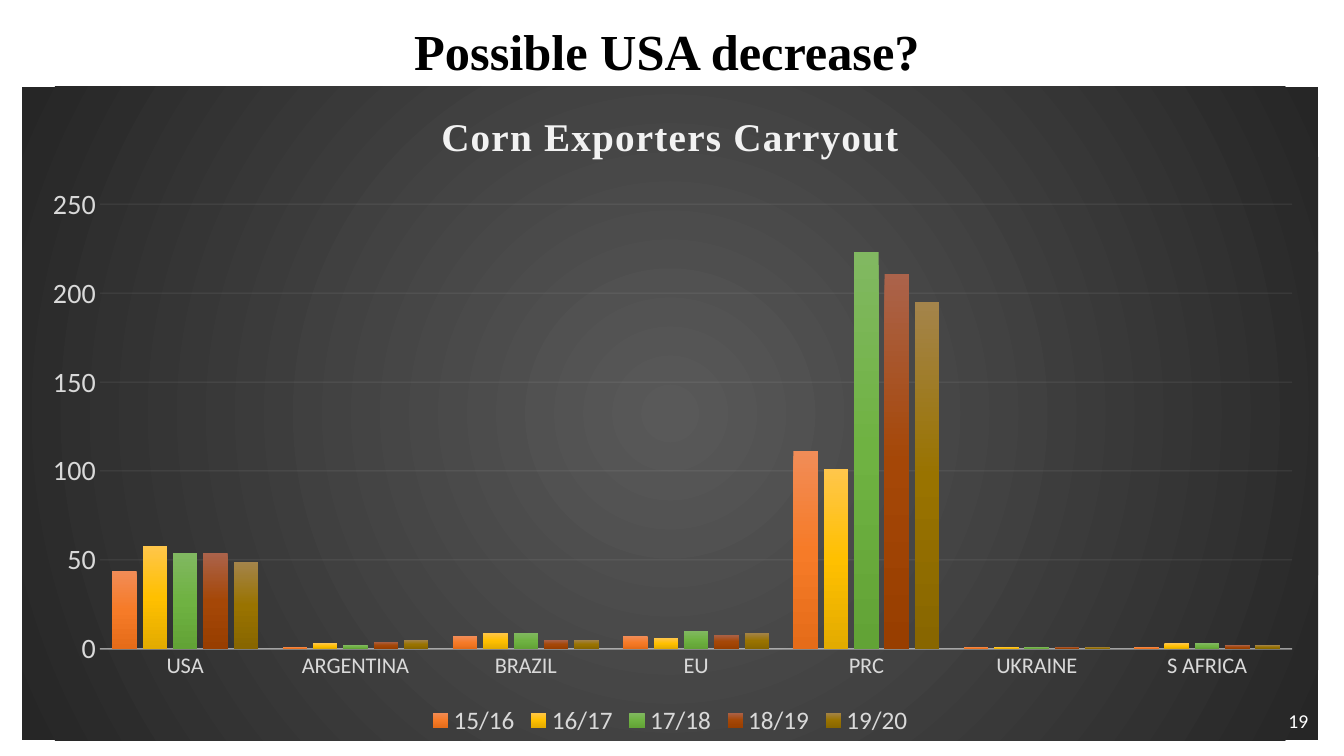
from dataclasses import dataclass

from lxml import etree
from pptx import Presentation
from pptx.chart.data import CategoryChartData
from pptx.dml.color import RGBColor
from pptx.enum.chart import XL_CHART_TYPE as ChartType
from pptx.enum.chart import XL_LEGEND_POSITION as LegendPosition
from pptx.enum.chart import XL_TICK_MARK as TickMark
from pptx.enum.text import MSO_ANCHOR as Anchor
from pptx.enum.text import PP_ALIGN as Align
from pptx.oxml import parse_xml
from pptx.oxml.ns import nsdecls, qn
from pptx.util import Cm, Pt


@dataclass(frozen=True)
class Theme:
    serif: str = "Times New Roman"
    sans: str = "Calibri"
    heading: str = "000000"
    page: str = "FFFFFF"
    label: str = "D9D9D9"
    light: str = "F2F2F2"
    backdrop: tuple = ("595959", "262626")
    heading_size: int = 36
    title_size: int = 28
    value_size: int = 20
    legend_size: int = 18
    category_size: int = 16
    page_size: int = 14


theme = Theme()


def style_font(font, name, size, color, bold=False):
    font.name = name
    font.size = Pt(size)
    font.bold = bold
    font.color.rgb = RGBColor.from_string(color)


def gradient(colors, direction):
    step = 100000 // (len(colors) - 1)
    stops = "".join(
        f'<a:gs pos="{i * step}"><a:srgbClr val="{color}"/></a:gs>'
        for i, color in enumerate(colors)
    )
    return parse_xml(
        f'<a:gradFill {nsdecls("a")} rotWithShape="1">'
        f"<a:gsLst>{stops}</a:gsLst>{direction}</a:gradFill>"
    )


categories = ["USA", "ARGENTINA", "BRAZIL", "EU", "PRC", "UKRAINE", "S AFRICA"]
seasons = [
    ("15/16", (44, 1, 7, 7, 111, 1, 1), ("F18C57", "F67B28", "E56C19")),
    ("16/17", (58, 3, 9, 6, 101, 1, 3), ("FFC64B", "FFC000", "E3AB00")),
    ("17/18", (54, 2, 9, 10, 223, 1, 3), ("81B861", "6FB242", "62A336")),
    ("18/19", (54, 4, 5, 8, 211, 1, 2), ("AB634B", "A54707", "983E00")),
    ("19/20", (49, 5, 5, 9, 195, 1, 2), ("A4844B", "997300", "886600")),
]

deck = Presentation()
deck.slide_width = Cm(33.87)
deck.slide_height = Cm(19.05)
slide = deck.slides.add_slide(deck.slide_layouts[6])

carryout = CategoryChartData(number_format="0")
carryout.categories = categories
for season, tonnage, _ in seasons:
    carryout.add_series(season, tonnage)
chart = slide.shapes.add_chart(
    ChartType.COLUMN_CLUSTERED, Cm(0.56), Cm(2.18), Cm(32.66), Cm(16.48), carryout
).chart
style_font(chart.font, theme.sans, 10, theme.heading)

backdrop = parse_xml(f'<c:spPr {nsdecls("c", "a")}/>')
backdrop.append(gradient(
    theme.backdrop,
    '<a:path path="circle">'
    '<a:fillToRect l="50000" t="50000" r="50000" b="50000"/></a:path>',
))
etree.SubElement(etree.SubElement(backdrop, qn("a:ln")), qn("a:noFill"))
chart._chartSpace.chart.addnext(backdrop)

chart.has_title = True
chart.chart_title.include_in_layout = False
chart_title = chart.chart_title.text_frame.paragraphs[0]
chart_title.text = "Corn Exporters Carryout"
style_font(chart_title.font, theme.serif, theme.title_size, theme.light, True)
chart_title.runs[0].font._element.set("spc", "100")

chart.has_legend = True
chart.legend.position = LegendPosition.BOTTOM
chart.legend.include_in_layout = False
style_font(chart.legend.font, theme.sans, theme.legend_size, theme.label)

countries = chart.category_axis
tonnes = chart.value_axis
for axis, size in ((countries, theme.category_size), (tonnes, theme.value_size)):
    axis.major_tick_mark = axis.minor_tick_mark = TickMark.NONE
    style_font(axis.tick_labels.font, theme.sans, size, theme.label)
tonnes.minimum_scale = 0
tonnes.maximum_scale = 250
tonnes.major_unit = 50
tonnes.tick_labels.number_format = "0"
tonnes.tick_labels.number_format_is_linked = False
tonnes.format.line.fill.background()

for line, width, opacity in (
    (countries.format.line, 1, 54),
    (tonnes.major_gridlines.format.line, 0.75, 10),
):
    line.width = Pt(width)
    line.color.rgb = RGBColor.from_string(theme.light)
    tint = line._ln.find(".//" + qn("a:srgbClr"))
    etree.SubElement(tint, qn("a:alpha")).set("val", str(opacity * 1000))

columns = chart.plots[0]
columns.vary_by_categories = False
columns.gap_width = 100
columns.overlap = -24
for series, (_, _, shades) in zip(columns.series, seasons):
    series.invert_if_negative = False
    series._element.get_or_add_spPr().append(
        gradient(shades, '<a:lin ang="5400000" scaled="0"/>')
    )

plot_area = chart._chartSpace.chart.plotArea
for stale in plot_area.findall(qn("c:layout")):
    plot_area.remove(stale)
frame = {"x": 0.06, "y": 0.18, "w": 0.92, "h": 0.68}
plot_area.insert(0, parse_xml(
    f'<c:layout {nsdecls("c")}><c:manualLayout><c:layoutTarget val="inner"/>'
    '<c:xMode val="edge"/><c:yMode val="edge"/>'
    + "".join(f'<c:{side} val="{share}"/>' for side, share in frame.items())
    + "</c:manualLayout></c:layout>"
))

page_frame = slide.shapes.add_textbox(Cm(25.6), Cm(17.65), Cm(7.62), Cm(1.02)).text_frame
page_frame.word_wrap = True
page_frame.vertical_anchor = Anchor.MIDDLE
page_number = page_frame.paragraphs[0]
page_number.text = "19"
page_number.alignment = Align.RIGHT
style_font(page_number.font, theme.sans, theme.page_size, theme.page)

heading_frame = slide.shapes.add_textbox(Cm(10.19), Cm(0.38), Cm(13.39), Cm(1.8)).text_frame
heading_frame.word_wrap = False
heading = heading_frame.paragraphs[0]
heading.text = "Possible USA decrease?"
style_font(heading.font, theme.serif, theme.heading_size, theme.heading, True)

deck.save("out.pptx")
